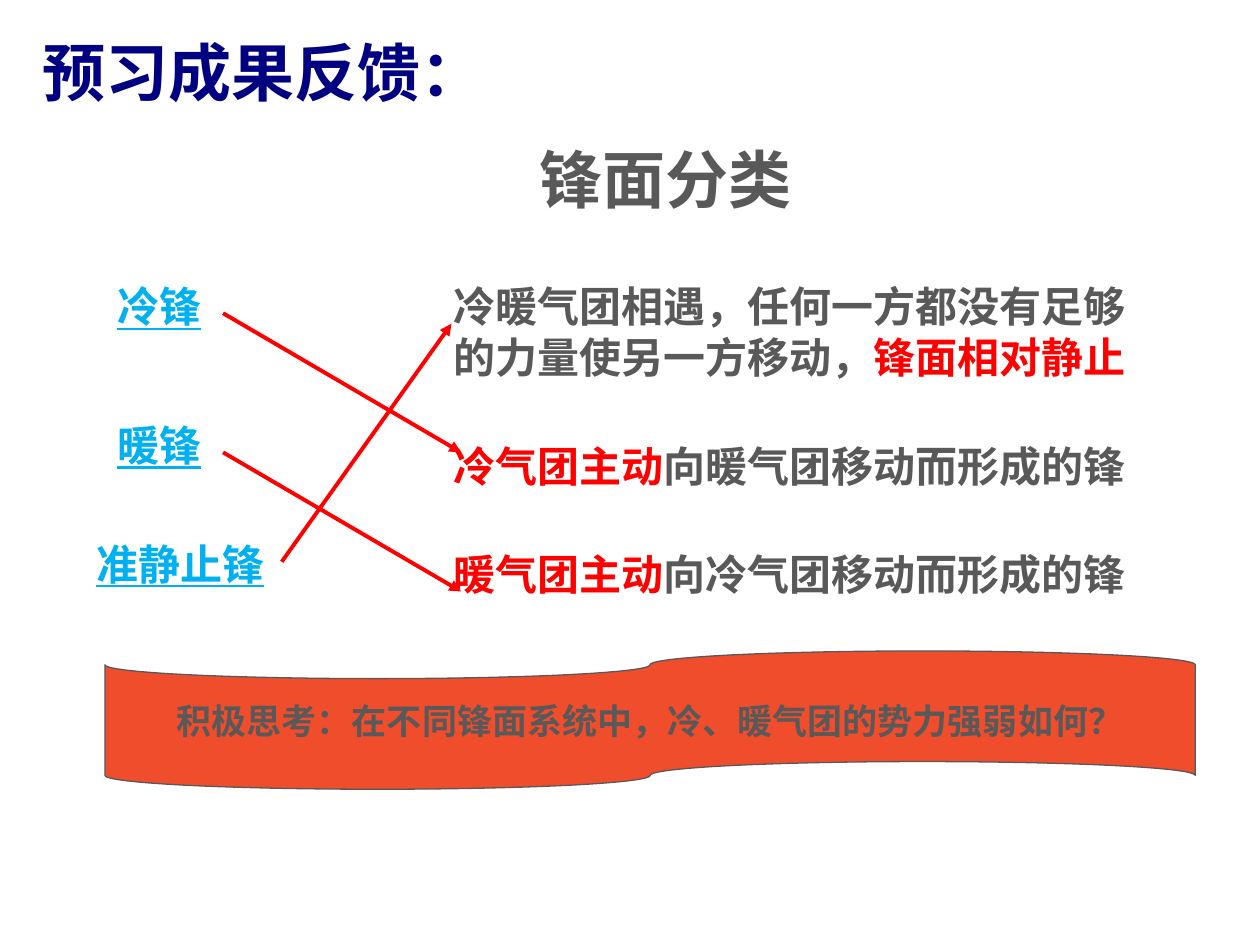
import pptx
import pptx.dml.color
import pptx.enum.shapes
import pptx.enum.text
import pptx.oxml.ns
import pptx.util
from lxml import etree

Pt = pptx.util.Pt
Align = pptx.enum.text.PP_ALIGN
Anchor = pptx.enum.text.MSO_ANCHOR


def rgb(value):
    return pptx.dml.color.RGBColor.from_string(value)


class Deck:
    FONT, TITLE_FONT = "Arial", "Noto Sans CJK SC"
    NAVY, GREY, RED, BLUE, ORANGE = "000080", "595959", "FF0000", "00B0F0", "F04D2C"

    def __init__(self, width, height):
        self.prs = pptx.Presentation()
        self.prs.slide_width, self.prs.slide_height = Pt(width), Pt(height)
        self.slide = self.prs.slides.add_slide(self.prs.slide_layouts[5])

    def fill_text(self, sp, lines, size, font=FONT, align=Align.LEFT,
                  anchor=Anchor.TOP, wrap=True, underline=None):
        """Each line is a list of (text, colour) runs."""
        tf = sp.text_frame
        tf.auto_size = pptx.enum.text.MSO_AUTO_SIZE.NONE
        tf.word_wrap, tf.vertical_anchor = wrap, anchor
        for i, runs in enumerate(lines):
            p = tf.add_paragraph() if i else tf.paragraphs[0]
            p.alignment = align
            p.font.name, p.font.size, p.font.bold = font, Pt(size), True
            p.font.underline = underline
            for text, color in runs:
                r = p.add_run()
                r.text = text
                r.font.color.rgb = rgb(color)

    def title(self, text, x, y, w, h):
        sp = self.slide.shapes.title
        sp.left, sp.top, sp.width, sp.height = Pt(x), Pt(y), Pt(w), Pt(h)
        self.fill_text(sp, [[(text, self.NAVY)]], 36, self.TITLE_FONT,
                       Align.CENTER, Anchor.MIDDLE, wrap=False)

    def text(self, lines, x, y, w, h, size=24, **style):
        sp = self.slide.shapes.add_textbox(Pt(x), Pt(y), Pt(w), Pt(h))
        self.fill_text(sp, lines, size, **style)

    def arrow(self, x1, y1, x2, y2):
        line = self.slide.shapes.add_connector(
            pptx.enum.shapes.MSO_CONNECTOR.STRAIGHT, Pt(x1), Pt(y1), Pt(x2), Pt(y2))
        line.line.color.rgb = rgb(self.RED)
        line.line.width = Pt(2.25)
        qn = pptx.oxml.ns.qn
        sp_pr = line._element.spPr
        etree.SubElement(sp_pr.find(qn("a:ln")), qn("a:tailEnd"), type="triangle")
        etree.SubElement(sp_pr, qn("a:effectLst"))

    def banner(self, text, x, y, w, h):
        sp = self.slide.shapes.add_shape(
            pptx.enum.shapes.MSO_SHAPE.FLOWCHART_PUNCHED_TAPE, Pt(x), Pt(y), Pt(w), Pt(h))
        sp.shadow.inherit = False
        sp.fill.solid()
        sp.fill.fore_color.rgb = rgb(self.ORANGE)
        sp.line.color.rgb = rgb(self.GREY)
        sp.line.width = Pt(0.75)
        self.fill_text(sp, [[(text, self.GREY)]], 20, align=Align.CENTER,
                       anchor=Anchor.MIDDLE, wrap=False)


def main():
    deck = Deck(720, 540)
    grey, red = deck.GREY, deck.RED

    # Headings
    deck.title("预习成果反馈：", 14.4, 15, 272, 52)
    deck.text([[("锋面分类", grey)]], 281, 77, 199, 50, size=36, align=Align.CENTER)

    # Front types
    for name, x, y, w in [("冷锋", 60, 157, 92), ("暖锋", 60, 236, 86),
                          ("准静止锋", 48, 304, 132)]:
        deck.text([[(name, deck.BLUE)]], x, y, w, 36, underline=True)

    # Definitions
    definitions = [
        (157, 420, 70, [[("冷暖气团相遇，任何一方都没有足够", grey)],
                        [("的力量使另一方移动，", grey), ("锋面相对静止", red)]]),
        (248, 402, 36, [[("冷气团主动", red), ("向暖气团移动而形成的锋", grey)]]),
        (310, 448, 36, [[("暖气团主动", red), ("向冷气团移动而形成的锋", grey)]]),
    ]
    for y, w, h, lines in definitions:
        deck.text(lines, 252, y, w, h)

    # Matching arrows
    for y in (179, 258.5):
        deck.arrow(127.5, y, 263.5, y + 79.5)
    deck.arrow(161, 321, 258, 185)

    # Question banner
    deck.banner("积极思考：在不同锋面系统中，冷、暖气团的势力强弱如何？", 60, 372, 623, 79)

    deck.prs.save("out.pptx")


if __name__ == "__main__":
    main()
